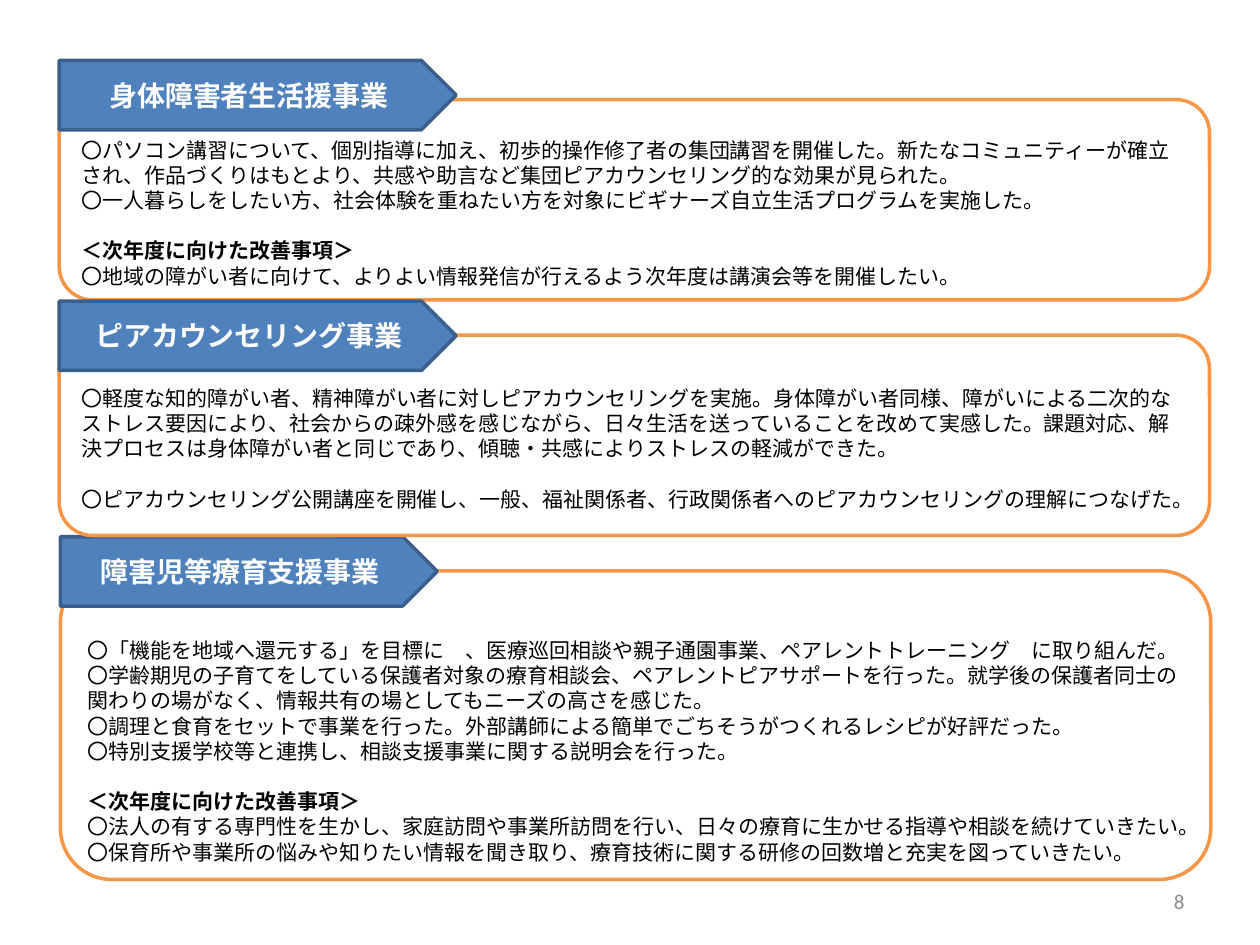
from pptx import Presentation
from pptx.dml.color import RGBColor
from pptx.enum.shapes import MSO_SHAPE
from pptx.enum.text import MSO_ANCHOR, PP_ALIGN
from pptx.util import Inches, Pt

FONT = "Calibri"
BLANK_LAYOUT = 6
BODY_SIZE = 12
LINE_GAP = 14.4  # one empty body line, in points
PANEL_WIDTH = 9.13
TAG_HEIGHT = 0.55
HEADING = "＜次年度に向けた改善事項＞"

# Sections from back to front. Lengths in inches.
# "gaps" holds the indexes of paragraphs that follow an empty line.
SECTIONS = [
    dict(
        title="身体障害者生活援事業",
        left=0.47, tag_top=0.48, tag_width=3.15,
        panel_top=0.79, panel_height=1.59, text_inset=0.22, gaps={2},
        lines=[
            "〇パソコン講習について、個別指導に加え、初歩的操作修了者の集団講習を開催した。"
            "新たなコミュニティーが確立され、作品づくりはもとより、共感や助言など"
            "集団ピアカウンセリング的な効果が見られた。",
            "〇一人暮らしをしたい方、社会体験を重ねたい方を対象に"
            "ビギナーズ自立生活プログラムを実施した。",
            HEADING,
            "〇地域の障がい者に向けて、よりよい情報発信が行えるよう"
            "次年度は講演会等を開催したい。",
        ],
    ),
    dict(
        title="障害児等療育支援事業",
        left=0.48, tag_top=4.26, tag_width=2.99,
        panel_top=4.53, panel_height=2.45, text_inset=0.41, gaps={4},
        lines=[
            "〇「機能を地域へ還元する」を目標に　、医療巡回相談や親子通園事業、"
            "ペアレントトレーニング　に取り組んだ。",
            "〇学齢期児の子育てをしている保護者対象の療育相談会、"
            "ペアレントピアサポートを行った。就学後の保護者同士の関わりの場がなく、"
            "情報共有の場としてもニーズの高さを感じた。",
            "〇調理と食育をセットで事業を行った。"
            "外部講師による簡単でごちそうがつくれるレシピが好評だった。",
            "〇特別支援学校等と連携し、相談支援事業に関する説明会を行った。",
            HEADING,
            "〇法人の有する専門性を生かし、家庭訪問や事業所訪問を行い、"
            "日々の療育に生かせる指導や相談を続けていきたい。",
            "〇保育所や事業所の悩みや知りたい情報を聞き取り、"
            "療育技術に関する研修の回数増と充実を図っていきたい。",
        ],
    ),
    dict(
        title="ピアカウンセリング事業",
        left=0.47, tag_top=2.39, tag_width=3.15,
        panel_top=2.66, panel_height=1.59, text_inset=0.32, gaps={1},
        lines=[
            "〇軽度な知的障がい者、精神障がい者に対しピアカウンセリングを実施。"
            "身体障がい者同様、障がいによる二次的なストレス要因により、"
            "社会からの疎外感を感じながら、日々生活を送っていることを改めて実感した。"
            "課題対応、解決プロセスは身体障がい者と同じであり、"
            "傾聴・共感によりストレスの軽減ができた。",
            "〇ピアカウンセリング公開講座を開催し、一般、福祉関係者、"
            "行政関係者へのピアカウンセリングの理解につなげた。",
        ],
    ),
]


def color(hex_string):
    return RGBColor.from_string(hex_string)


def add_run(paragraph, text, size, hex_string, bold=False, align=PP_ALIGN.LEFT):
    paragraph.alignment = align
    run = paragraph.add_run()
    run.text = text
    run.font.name = FONT
    run.font.size = Pt(size)
    run.font.bold = bold
    run.font.color.rgb = color(hex_string)


def add_box(slide, kind, bounds, fill, line):
    shape = slide.shapes.add_shape(kind, *map(Inches, bounds))
    shape.shadow.inherit = False
    shape.fill.solid()
    shape.fill.fore_color.rgb = color(fill)
    shape.line.color.rgb = color(line)
    shape.line.width = Pt(2)
    shape.text_frame.word_wrap = True
    return shape


def add_panel(slide, section):
    bounds = (section["left"], section["panel_top"],
              PANEL_WIDTH, section["panel_height"])
    panel = add_box(slide, MSO_SHAPE.ROUNDED_RECTANGLE, bounds, "FFFFFF", "F79646")
    frame = panel.text_frame
    frame.vertical_anchor = MSO_ANCHOR.TOP
    frame.margin_top = Inches(section["text_inset"])
    for index, text in enumerate(section["lines"]):
        paragraph = frame.add_paragraph() if index else frame.paragraphs[0]
        if index in section["gaps"]:
            paragraph.space_before = Pt(LINE_GAP)
        add_run(paragraph, text, BODY_SIZE, "000000", bold=text == HEADING)


def add_tag(slide, section):
    bounds = (section["left"], section["tag_top"],
              section["tag_width"], TAG_HEIGHT)
    tag = add_box(slide, MSO_SHAPE.PENTAGON, bounds, "4F81BD", "3A5F8C")
    tag.text_frame.vertical_anchor = MSO_ANCHOR.MIDDLE
    add_run(tag.text_frame.paragraphs[0], section["title"], 16, "FFFFFF",
            bold=True, align=PP_ALIGN.CENTER)


def add_page_number(slide, number):
    box = slide.shapes.add_textbox(*map(Inches, (7.17, 6.95, 2.33, 0.4)))
    frame = box.text_frame
    frame.word_wrap = True
    frame.vertical_anchor = MSO_ANCHOR.MIDDLE
    add_run(frame.paragraphs[0], number, 12, "8C8C8C", align=PP_ALIGN.RIGHT)


def main():
    presentation = Presentation()
    presentation.slide_width = Inches(10)
    presentation.slide_height = Inches(7.5)
    slide = presentation.slides.add_slide(presentation.slide_layouts[BLANK_LAYOUT])

    # Each panel lies under its own heading tag
    for section in SECTIONS:
        add_panel(slide, section)
        add_tag(slide, section)

    add_page_number(slide, "8")
    presentation.save("out.pptx")


if __name__ == "__main__":
    main()
